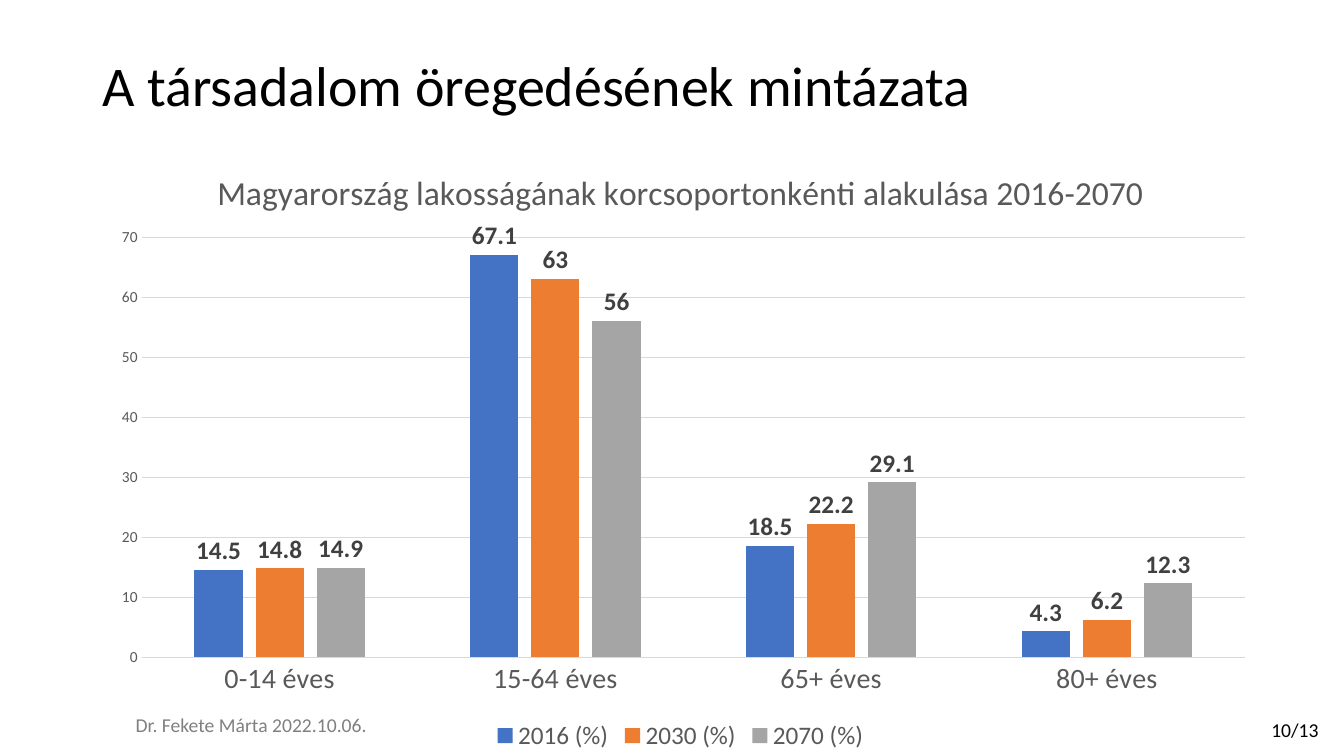
"""Slide with a clustered column chart of Hungary's population by age group."""
from lxml import etree
from pptx import Presentation
from pptx.chart.data import CategoryChartData
from pptx.dml.color import RGBColor
from pptx.enum import chart as ch, text as tx
from pptx.util import Pt

FONT = "Calibri"
BLACK = RGBColor(0x00, 0x00, 0x00)
GREY = RGBColor(0x80, 0x80, 0x80)
LABEL_GREY = RGBColor(0x59, 0x59, 0x59)
VALUE_GREY = RGBColor(0x40, 0x40, 0x40)
GRID_GREY = RGBColor(0xD9, 0xD9, 0xD9)
BLUE = RGBColor(0x44, 0x72, 0xC4)
ORANGE = RGBColor(0xED, 0x7D, 0x31)
SILVER = RGBColor(0xA5, 0xA5, 0xA5)
CHART_NS = "http://schemas.openxmlformats.org/drawingml/2006/chart"


def style(font, size, color, bold=False):
    for key, value in {"name": FONT, "size": Pt(size), "bold": bold}.items():
        setattr(font, key, value)
    font.color.rgb = color


prs = Presentation()
prs.slide_width, prs.slide_height = Pt(960), Pt(540)
slide = prs.slides.add_slide(prs.slide_layouts[6])

age_data = CategoryChartData()
age_data.categories = ["0-14 éves", "15-64 éves", "65+ éves", "80+ éves"]
years = [
    ("2016 (%)", (14.5, 67.1, 18.5, 4.3), BLUE),
    ("2030 (%)", (14.8, 63, 22.2, 6.2), ORANGE),
    ("2070 (%)", (14.9, 56, 29.1, 12.3), SILVER),
]
for year, shares, _ in years:
    age_data.add_series(year, shares)
population = slide.shapes.add_chart(
    ch.XL_CHART_TYPE.COLUMN_CLUSTERED, Pt(66), Pt(104.5), Pt(840), Pt(435.5), age_data
).chart
style(population.font, 10, BLACK)

heading = population.chart_title.text_frame.paragraphs[0].add_run()
heading.text = "Magyarország lakosságának korcsoportonkénti alakulása 2016-2070"
style(heading.font, 24, LABEL_GREY)
population.chart_title.include_in_layout = False

population.has_legend = True
population.legend.position = ch.XL_LEGEND_POSITION.BOTTOM
population.legend.include_in_layout = False
style(population.legend.font, 18, LABEL_GREY)

ages, percent = population.category_axis, population.value_axis
for axis, size in ((ages, 20), (percent, 11)):
    axis.major_tick_mark = axis.minor_tick_mark = ch.XL_TICK_MARK.NONE
    style(axis.tick_labels.font, size, LABEL_GREY)
percent.minimum_scale, percent.maximum_scale, percent.major_unit = 0, 70, 10
percent.format.line.fill.background()
for line in (ages.format.line, percent.major_gridlines.format.line):
    line.color.rgb = GRID_GREY
    line.width = Pt(0.75)

columns = population.plots[0]
columns.gap_width, columns.overlap, columns.vary_by_categories = 219, -27, False
for series, (_, _, color) in zip(columns.series, years):
    series.format.fill.solid()
    series.format.fill.fore_color.rgb = color
    series.data_labels.show_value = True
    series.data_labels.position = ch.XL_LABEL_POSITION.OUTSIDE_END
    style(series.data_labels.font, 18, VALUE_GREY, True)

plot_area = population.element.find(f".//{{{CHART_NS}}}plotArea")
for empty_layout in plot_area.findall(f"{{{CHART_NS}}}layout"):
    plot_area.remove(empty_layout)
layout = etree.Element(f"{{{CHART_NS}}}layout")
manual = etree.SubElement(layout, f"{{{CHART_NS}}}manualLayout")
for tag, value in (("layoutTarget", "inner"), ("xMode", "edge"), ("yMode", "edge"),
                   ("x", "0.042"), ("y", "0.149"), ("w", "0.938"), ("h", "0.689")):
    etree.SubElement(manual, f"{{{CHART_NS}}}{tag}").set("val", value)
plot_area.insert(0, layout)

LEFT, CENTER = tx.PP_ALIGN.LEFT, tx.PP_ALIGN.CENTER
TOP, MIDDLE, BOTTOM = tx.MSO_ANCHOR.TOP, tx.MSO_ANCHOR.MIDDLE, tx.MSO_ANCHOR.BOTTOM
captions = [
    ("A társadalom öregedésének mintázata", (66, 15, 828, 73.5), 40, BLACK, LEFT, BOTTOM, 0.9),
    ("Dr. Fekete Márta 2022.10.06.", (17.5, 503.5, 324, 28.75), 14, GREY, CENTER, MIDDLE, 1),
    ("10/13", (901, 509, 59, 24.25), 14, BLACK, LEFT, TOP, 1),
]
for wording, box, size, color, align, anchor, spacing in captions:
    frame = slide.shapes.add_textbox(*map(Pt, box)).text_frame
    frame.word_wrap = True
    frame.vertical_anchor = anchor
    paragraph = frame.paragraphs[0]
    paragraph.alignment, paragraph.line_spacing = align, spacing
    run = paragraph.add_run()
    run.text = wording
    style(run.font, size, color)

prs.save("out.pptx")
